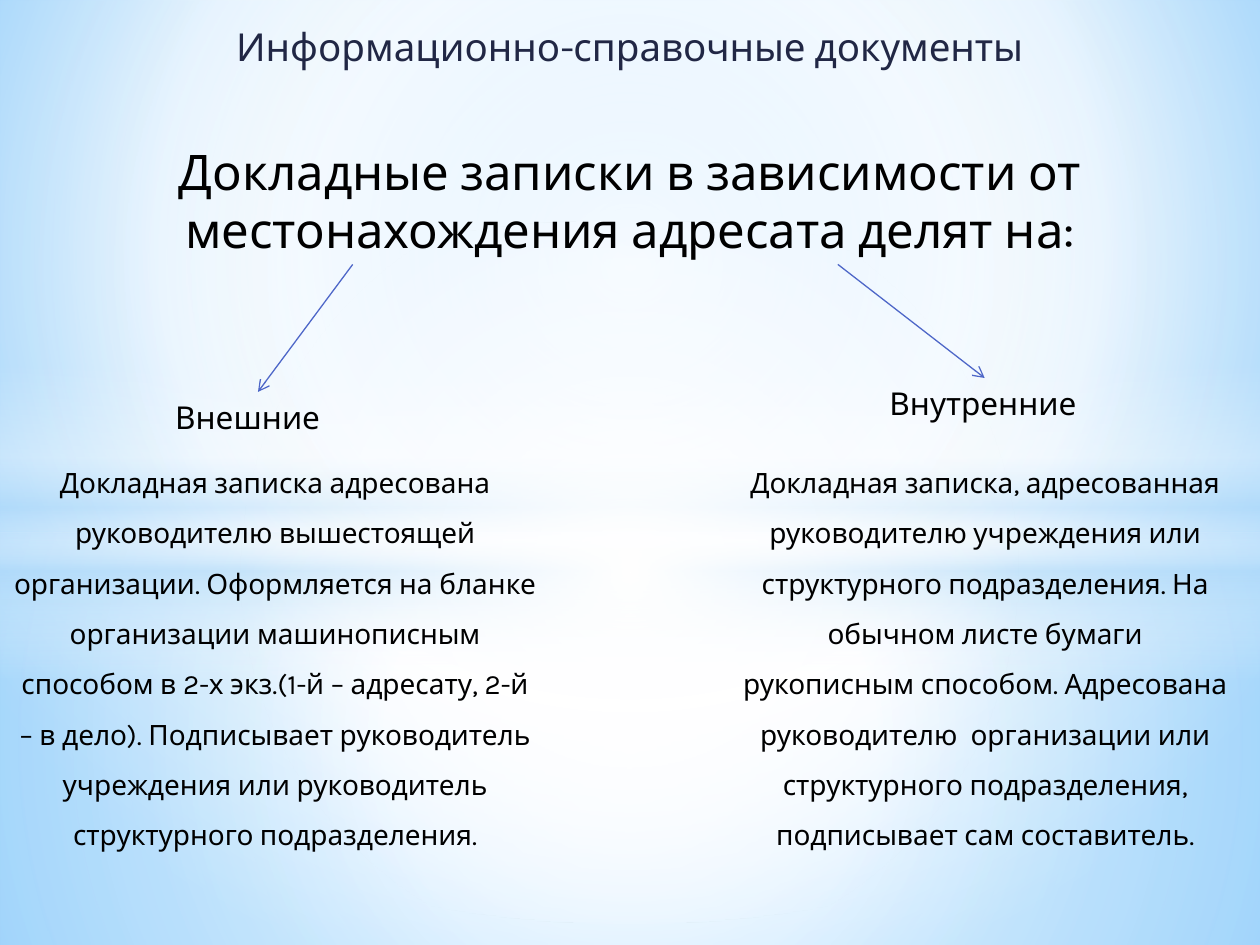
from lxml.etree import SubElement
from pptx import Presentation
from pptx.dml.color import RGBColor
from pptx.enum.shapes import MSO_CONNECTOR, MSO_SHAPE
from pptx.enum.text import MSO_ANCHOR, MSO_AUTO_SIZE, PP_ALIGN
from pptx.oxml import parse_xml
from pptx.oxml.ns import nsdecls, qn
from pptx.util import Cm, Pt

FONT = "Karla"
W, H = 25.4, 19.05
CENTER = (50, 50, 50, 50)


def rgb(value):
    return RGBColor.from_string(value)


def set_gradient(fill, root, stops, focus=None):
    fill.solid()
    gs = "".join(
        f'<a:gs pos="{pos * 1000}"><a:srgbClr val="{rgb(color)}">'
        f'<a:alpha val="{alpha * 1000}"/></a:srgbClr></a:gs>'
        for pos, color, alpha in stops)
    if focus:
        l, t, r, b = (v * 1000 for v in focus)
        direction = (f'<a:path path="circle"><a:fillToRect l="{l}" t="{t}" '
                     f'r="{r}" b="{b}"/></a:path>')
    else:
        direction = '<a:lin ang="5400000" scaled="0"/>'
    grad = parse_xml(f'<a:gradFill {nsdecls("a")} rotWithShape="1">'
                     f'<a:gsLst>{gs}</a:gsLst>{direction}</a:gradFill>')
    solid = next(root.iter(qn("a:solidFill")))
    solid.getparent().replace(solid, grad)


def write(sp, text, size, color="000000", align=PP_ALIGN.CENTER, spacing=1.0):
    tf = sp.text_frame
    tf.word_wrap = True
    tf.auto_size = MSO_AUTO_SIZE.NONE
    tf.vertical_anchor = MSO_ANCHOR.TOP
    p = tf.paragraphs[0]
    p.alignment = align
    p.line_spacing = spacing
    r = p.add_run()
    r.text = text
    r.font.name = FONT
    r.font.size = Pt(size)
    r.font.color.rgb = rgb(color)


def add_text(s, box, text, size, **fmt):
    sp = s.shapes.add_textbox(*map(Cm, box))
    write(sp, text, size, **fmt)
    return sp


def add_backdrop(s, box):
    x, y, w, h = box
    set_gradient(s.background.fill, s.element,
                 [(0, "9ED5FF", 100), (60, "FFFFFF", 100), (100, "5BB9FF", 100)],
                 (20, 10, 20, 60))
    horizon = 10.74
    layers = [
        (MSO_SHAPE.RECTANGLE, horizon, h - horizon, CENTER,
         [(0, "FFFFFF", 91), (37, "FFFFFF", 76), (100, "B4DCFA", 79)]),
        (MSO_SHAPE.RECTANGLE, 0, horizon, CENTER,
         [(0, "FFFFFF", 89), (48, "FFFFFF", 62), (100, "B4DCFA", 79)]),
        (MSO_SHAPE.RECTANGLE, 7.37, 6.35, None,
         [(0, "FFFFFF", 0), (29, "FFFFFF", 30), (45, "B4DCFA", 40),
          (55, "FFFFFF", 26), (65, "B4DCFA", 60), (100, "FFFFFF", 0)]),
        (MSO_SHAPE.OVAL, 4.45, 14.17, CENTER,
         [(0, "FFFFFF", 100), (54, "FFFFFF", 0)]),
    ]
    for kind, top, height, focus, stops in layers:
        sp = s.shapes.add_shape(kind, Cm(x), Cm(y + top), Cm(w), Cm(height))
        sp.shadow.inherit = False
        sp.line.fill.background()
        set_gradient(sp.fill, sp.element.spPr, stops, focus)


def add_title(s, box, text):
    sp = s.shapes.title
    sp.left, sp.top, sp.width, sp.height = map(Cm, box)
    write(sp, text, 22, color="212745")
    sp.element.getparent().append(sp.element)


def add_arrow(s, start, target):
    line = s.shapes.add_connector(MSO_CONNECTOR.STRAIGHT, *map(Cm, start * 2))
    line.end_connect(target, 0)
    line.line.color.rgb = rgb("4E67C8")
    line.line.width = Pt(0.75)
    SubElement(line.line._get_or_add_ln(), qn("a:tailEnd"), type="arrow")
    SubElement(line.element.spPr, qn("a:effectLst"))


def add_branch(s, box, heading, heading_box, start, text):
    x, y, w, h = box
    dx, dy, hw, hh = heading_box
    label = add_text(s, (x + dx, y + dy, hw, hh), heading, 18, align=PP_ALIGN.LEFT)
    add_arrow(s, start, label)
    add_text(s, box, text, 16, spacing=1.5)


def main():
    prs = Presentation()
    prs.slide_width, prs.slide_height = Cm(W), Cm(H)
    s = prs.slides.add_slide(prs.slide_layouts[5])
    add_backdrop(s, (0, 0, W, H))
    add_title(s, (0, 0.33, W, 1.6), "Информационно-справочные документы")
    add_text(s, (0, 2.72, W, 3.84),
             "Докладные записки в зависимости от местонахождения адресата делят на:", 28)
    add_branch(s, (0, 8.92, 11.1, 9.5), "Внешние", (3.28, -1.02, 3.84, 1.02),
               (7.11, 5.33),
               "Докладная записка адресована руководителю вышестоящей организации. "
               "Оформляется на бланке организации машинописным способом в 2-х экз."
               "(1-й – адресату, 2-й – в дело). Подписывает руководитель учреждения "
               "или руководитель структурного подразделения.")
    add_branch(s, (14.71, 8.92, 10.31, 8.46), "Внутренние", (2.97, -1.3, 4.34, 1.02),
               (16.89, 5.33),
               "Докладная записка, адресованная руководителю учреждения или "
               "структурного подразделения. На обычном листе бумаги рукописным "
               "способом. Адресована руководителю  организации или структурного "
               "подразделения, подписывает сам составитель.")
    prs.save("out.pptx")


if __name__ == "__main__":
    main()
